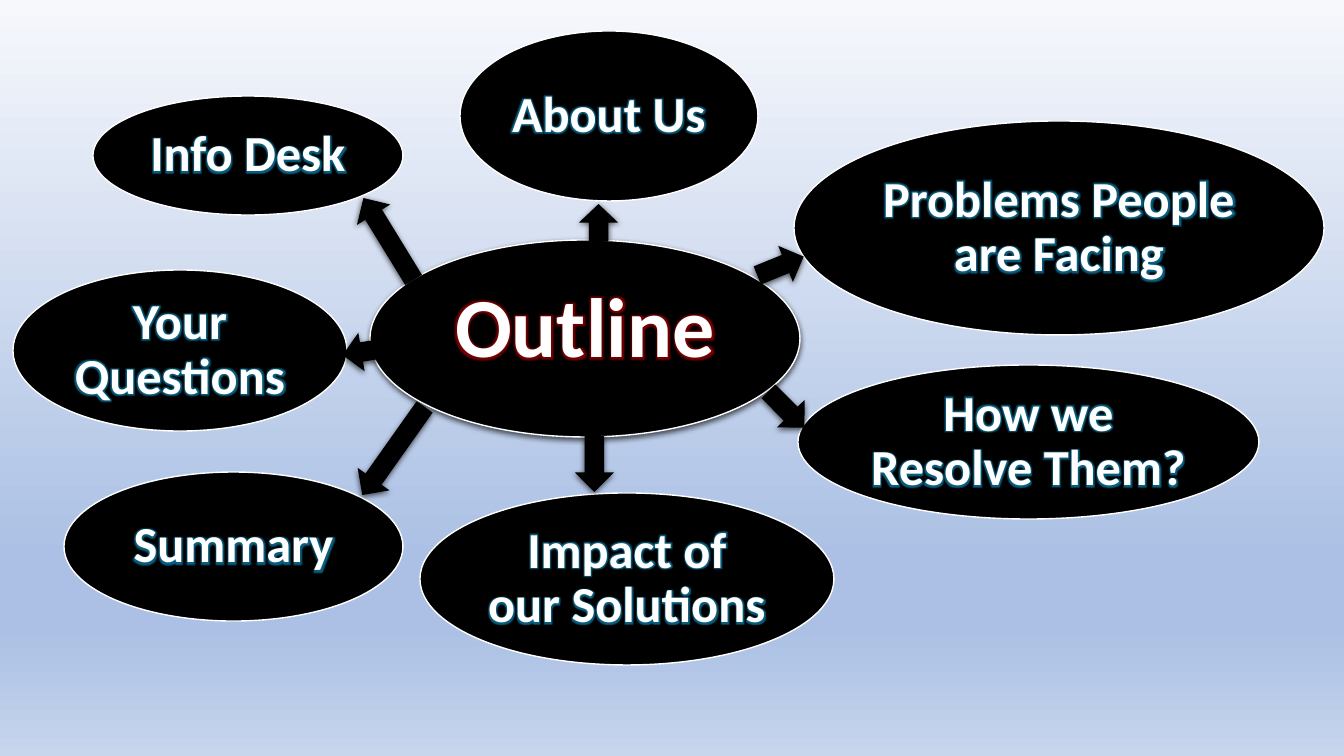
from lxml import etree
from pptx import Presentation
from pptx.dml.color import RGBColor
from pptx.enum.shapes import MSO_SHAPE
from pptx.enum.text import MSO_ANCHOR, PP_ALIGN
from pptx.oxml import parse_xml
from pptx.oxml.ns import qn
from pptx.util import Pt

OVAL, ARROW = MSO_SHAPE.OVAL, MSO_SHAPE.DOWN_ARROW
TOP, MIDDLE = MSO_ANCHOR.TOP, MSO_ANCHOR.MIDDLE
CENTER = PP_ALIGN.CENTER
NS = "http://schemas.openxmlformats.org/drawingml/2006/main"

PX = 914400 / 100.8
BLACK, WHITE = "000000", "FFFFFF"
RED_GLOW, BLUE_GLOW = "C00000", "0F9ED5"
ARROW_WIDTH = 39

BACKGROUND = [(0, "F6F8FC"), (74, "ABC0E4"), (83, "ABC0E4"), (100, "C7D5ED")]
HUB = ("Outline", 370, 240, 430, 197)
TOPICS = [
    ("About Us", 460, 31, 298, 170),
    ("Problems People are Facing", 794, 121, 530, 214),
    ("How we Resolve Them?", 798, 365, 461, 154),
    ("Impact of our Solutions", 420, 493, 414, 172),
    ("Summary", 64, 472, 339, 149),
    ("Your Questions", 13, 270, 334, 161),
    ("Info Desk", 93, 96, 310, 119),
]
ARROWS = [
    (575, 436, 56, 0),
    (374, 397, 108, 35.3),
    (767, 384, 51, 315.2),
    (579, 204, 37, 180),
    (761, 241, 50, 247.9),
    (369, 191, 96, 148.5),
    (342, 333, 38, 80.8),
]


def px(n):
    return round(n * PX)


def rgb(value):
    return RGBColor.from_string(value)


def add_effect(parent, name, color, alpha, **attrs):
    effects = parent.find(qn("a:effectLst"))
    if effects is None:
        effects = etree.SubElement(parent, qn("a:effectLst"))
    effect = etree.SubElement(effects, qn("a:" + name), {k: str(v) for k, v in attrs.items()})
    clr = etree.SubElement(effect, qn("a:srgbClr"), val=color)
    etree.SubElement(clr, qn("a:alpha"), val=str(alpha * 1000))


def add_black(s, kind, left, top, width, height, shadow=False):
    sp = s.shapes.add_shape(kind, px(left), px(top), px(width), px(height))
    sp.fill.solid()
    sp.fill.fore_color.rgb = rgb(BLACK)
    sp.line.fill.background()
    sp.shadow.inherit = False
    if shadow:
        add_effect(sp._element.spPr, "outerShdw", BLACK, 63,
                   blurRad=px(6), dist=px(2), dir=5400000, algn="ctr", rotWithShape=0)
    return sp


def add_bubble(s, bubble, size, glow, anchor, margin, spacing, shadow=False):
    text, *box = bubble
    sp = add_black(s, OVAL, *box, shadow)
    sp.line.color.rgb = rgb(WHITE)
    sp.line.width = Pt(1)
    tf = sp.text_frame
    tf.word_wrap = True
    tf.vertical_anchor = anchor
    tf.margin_left = tf.margin_right = px(margin)
    tf.margin_top = tf.margin_bottom = px(5)
    p = tf.paragraphs[0]
    p.alignment = CENTER
    p.line_spacing = spacing
    p.font.name = "Calibri"
    p.font.size = Pt(size)
    p.font.bold = True
    p.font.color.rgb = rgb(WHITE)
    r = p.add_run()
    r.text = text
    add_effect(r._r.get_or_add_rPr(), "glow", glow, 60, rad=px(6))


def set_background(s):
    fill = s.background.fill
    fill.gradient()
    fill.gradient_angle = 270
    stops = s.element.find(".//" + qn("a:gsLst"))
    stops[:] = [
        parse_xml(f'<a:gs xmlns:a="{NS}" pos="{pos * 1000}"><a:srgbClr val="{color}"/></a:gs>')
        for pos, color in BACKGROUND
    ]


def main():
    prs = Presentation()
    prs.slide_width, prs.slide_height = px(1344), px(756)
    s = prs.slides.add_slide(prs.slide_layouts[6])
    set_background(s)
    add_bubble(s, HUB, 60, RED_GLOW, TOP, 10, 1.0, shadow=True)
    for topic in TOPICS:
        add_bubble(s, topic, 36, BLUE_GLOW, MIDDLE, 5, 0.9)
    for left, top, length, angle in ARROWS:
        sp = add_black(s, ARROW, left, top, ARROW_WIDTH, length, shadow=True)
        sp.rotation = angle
    prs.save("out.pptx")


if __name__ == "__main__":
    main()
